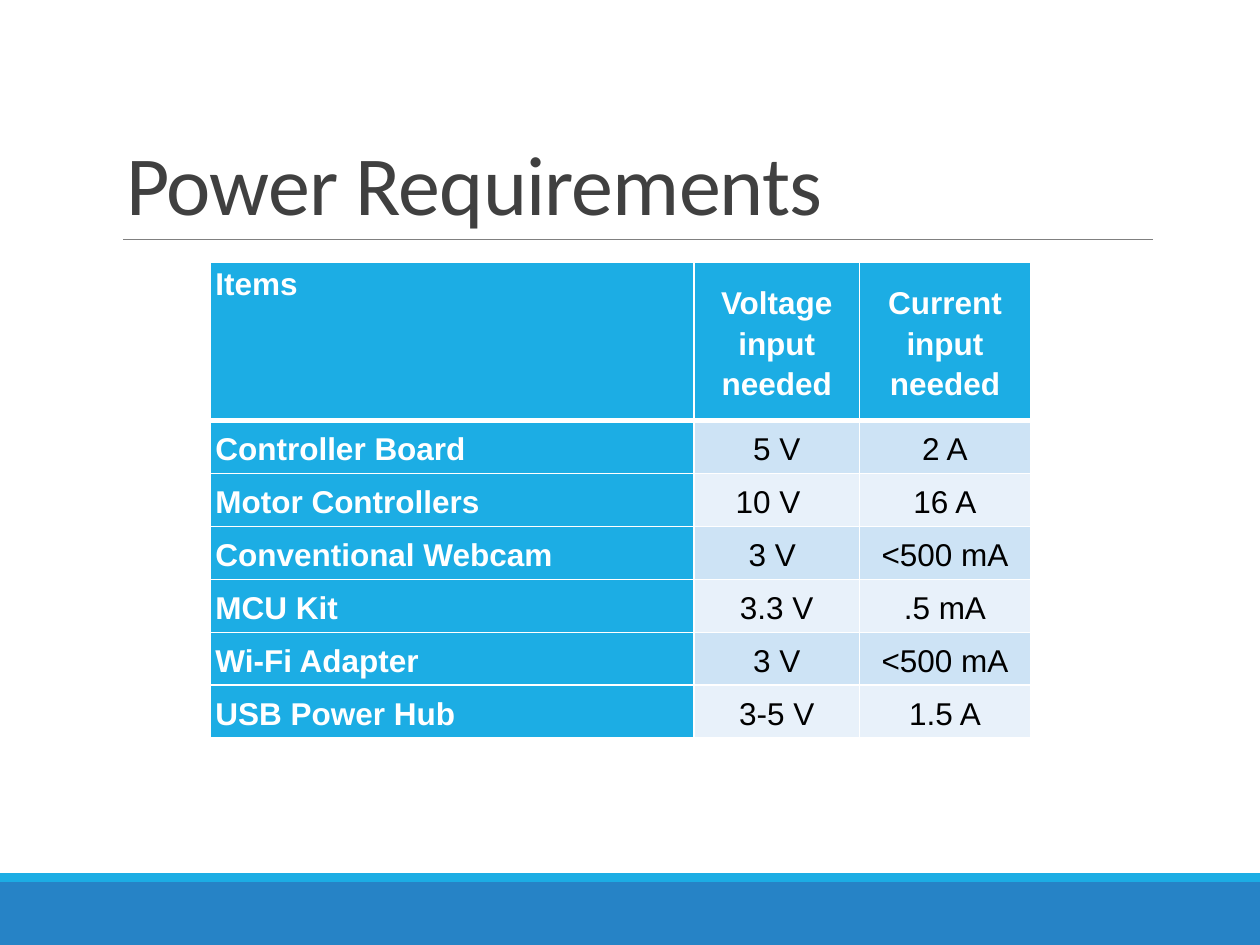
from dataclasses import dataclass

from lxml import etree
from pptx import Presentation
from pptx import util as u
from pptx.dml.color import RGBColor
from pptx.enum import shapes, text
from pptx.oxml import ns


@dataclass(frozen=True)
class Theme:
    """Colours, fonts and type sizes of the deck."""
    accent: str = "1CADE4"
    footer: str = "2683C6"
    rule: str = "808080"
    title: str = "404040"
    white: str = "FFFFFF"
    black: str = "000000"
    bands: tuple = ("CDE3F5", "E8F1FA")
    title_font: str = "Calibri"
    table_font: str = "Arial"
    title_size: int = 48
    table_size: int = 18


class SlideBuilder:
    """Draws styled elements on the current slide."""

    def __init__(self, slide, theme):
        self.s = slide
        self.theme = theme

    def font(self, p, name, size, color, bold=False):
        """Style a whole paragraph."""
        p.font.name, p.font.size, p.font.bold = name, u.Pt(size), bold
        p.font.color.rgb = RGBColor.from_string(color)

    def title(self, words, *box):
        """Fill and place the title placeholder."""
        sp = self.s.shapes.title
        sp.left, sp.top, sp.width, sp.height = map(u.Inches, box)
        tf = sp.text_frame
        tf.text = words
        tf.auto_size = text.MSO_AUTO_SIZE.NONE
        tf.vertical_anchor = text.MSO_ANCHOR.BOTTOM
        p = tf.paragraphs[0]
        p.alignment, p.line_spacing = text.PP_ALIGN.LEFT, 0.85
        self.font(p, self.theme.title_font, self.theme.title_size, self.theme.title)
        p._p.get_or_add_pPr().get_or_add_defRPr().set("spc", "-50")

    def band(self, color, *box):
        """Add a plain filled rectangle."""
        sp = self.s.shapes.add_shape(shapes.MSO_SHAPE.RECTANGLE, *map(u.Inches, box))
        sp.shadow.inherit = False
        sp.fill.solid()
        sp.fill.fore_color.rgb = RGBColor.from_string(color)
        sp.line.fill.background()

    def rule(self, *ends):
        """Add a thin straight line."""
        sp = self.s.shapes.add_connector(shapes.MSO_CONNECTOR.STRAIGHT, *map(u.Inches, ends))
        sp.line.color.rgb = RGBColor.from_string(self.theme.rule)
        sp.line.width = u.Pt(0.5)
        etree.SubElement(sp._element.spPr, ns.qn("a:effectLst"))

    def borders(self, cell, **widths):
        """Put white lines on the sides of a cell."""
        tc_pr = cell._tc.get_or_add_tcPr()
        for i, (side, width) in enumerate(widths.items()):
            ln = etree.Element(ns.qn(f"a:ln{side}"), w=str(u.Pt(width)))
            fill = etree.SubElement(ln, ns.qn("a:solidFill"))
            etree.SubElement(fill, ns.qn("a:srgbClr"), val=self.theme.white)
            tc_pr.insert(i, ln)

    def cell(self, cell, words, row, col, shift):
        """Fill and style one table cell."""
        strong = row == 0 or col == 0
        th = self.theme
        cell.text = words
        cell.margin_left = u.Inches(0.04)
        cell.margin_right = u.Inches(0.04 + shift)
        cell.margin_top = cell.margin_bottom = 0
        cell.vertical_anchor = text.MSO_ANCHOR.MIDDLE if row or col else text.MSO_ANCHOR.TOP
        cell.fill.solid()
        fill = th.accent if strong else th.bands[(row - 1) % 2]
        cell.fill.fore_color.rgb = RGBColor.from_string(fill)
        p = cell.text_frame.paragraphs[0]
        p.line_spacing, p.space_after = 1.15, u.Pt(10)
        p.alignment = text.PP_ALIGN.CENTER if col else text.PP_ALIGN.LEFT
        self.font(p, th.table_font, th.table_size, th.white if strong else th.black, strong)
        self.borders(cell, L=1, R=1, T=3 if row == 1 else 1, B=1 if row else 3)

    def table(self, rows, widths, heights, left, top, shifts):
        """Add the table with its header row and header column."""
        box = map(u.Inches, (left, top, sum(widths), sum(heights)))
        table = self.s.shapes.add_table(len(rows), len(widths), *box).table
        for column, width in zip(table.columns, widths):
            column.width = u.Inches(width)
        for r, (row, height) in enumerate(zip(rows, heights)):
            table.rows[r].height = u.Inches(height)
            for c, words in enumerate(row):
                self.cell(table.cell(r, c), words, r, c, shifts.get((r, c), 0))


ROWS = [
    ("Items", "Voltage input needed", "Current input needed"),
    ("Controller Board", "5 V", "2 A"),
    ("Motor Controllers", "10 V", "16 A"),
    ("Conventional Webcam", "3 V", "<500 mA"),
    ("MCU Kit", "3.3 V", ".5 mA"),
    ("Wi-Fi Adapter", "3 V", "<500 mA"),
    ("USB Power Hub", "3-5 V", "1.5 A"),
]


def main():
    """Build the power requirements slide."""
    prs = Presentation()
    prs.slide_width, prs.slide_height = u.Inches(10), u.Inches(7.5)
    theme = Theme()
    b = SlideBuilder(prs.slides.add_slide(prs.slide_layouts[5]), theme)
    b.band(theme.footer, 0, 7, 10, 0.5)
    b.band(theme.accent, 0, 6.93, 10, 0.07)
    b.rule(0.98, 1.9, 9.15, 1.9)
    b.title("Power Requirements", 0.9, 0.31, 8.25, 1.59)
    heights = [1.26] + [0.42] * (len(ROWS) - 1)
    b.table(ROWS, (3.84, 1.31, 1.36), heights, 1.67, 2.08, {(2, 1): 0.14, (3, 1): 0.07})
    prs.save("out.pptx")


if __name__ == "__main__":
    main()
